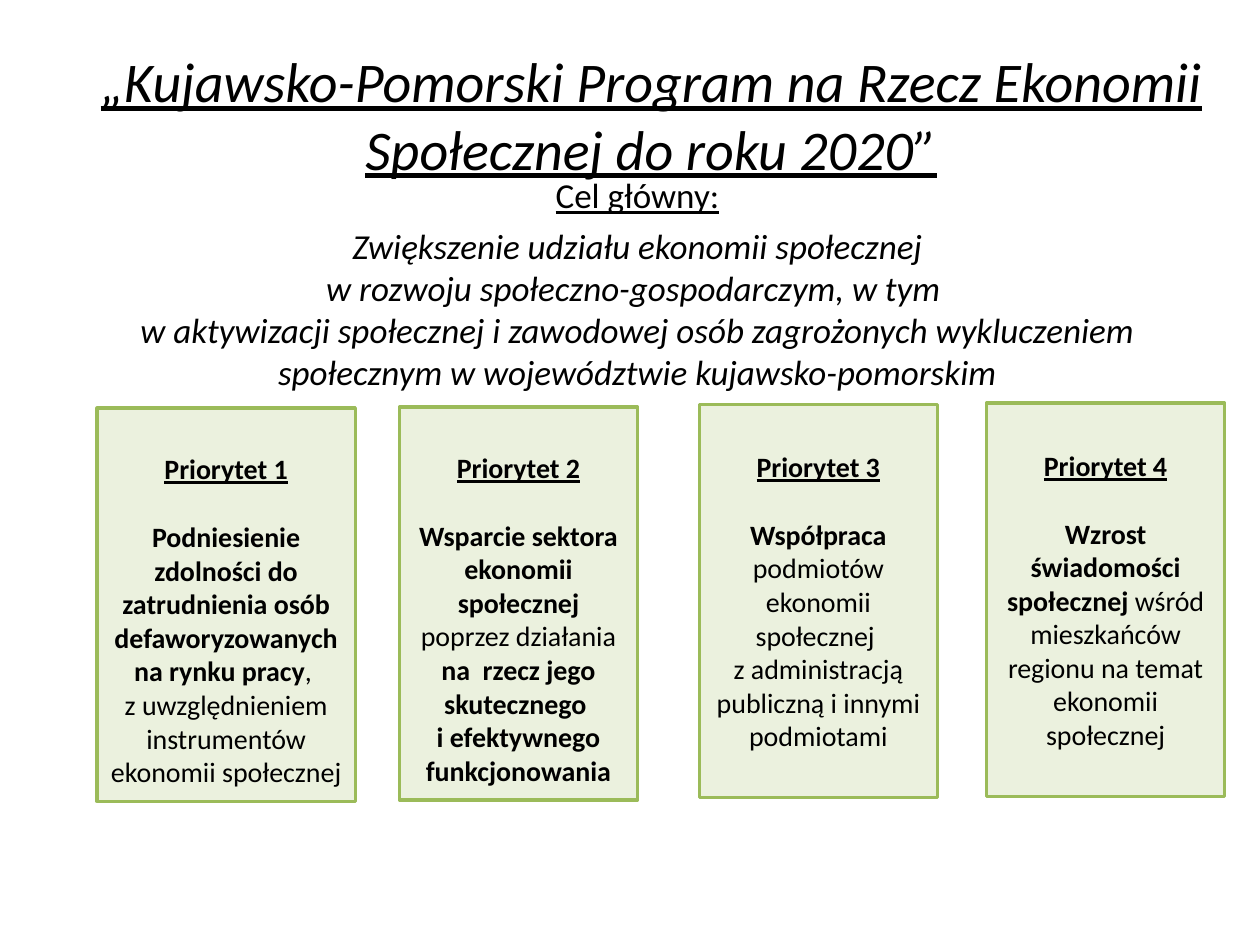
"""Build the slide on the regional social economy programme and its four priorities."""
from pptx import Presentation
from pptx import util as u
from pptx.dml.color import RGBColor
from pptx.enum import shapes, text

BLACK = RGBColor(0x00, 0x00, 0x00)
PALE_GREEN = RGBColor(0xEB, 0xF1, 0xDE)
GREEN = RGBColor(0x9B, 0xBB, 0x59)

presentation = Presentation()
presentation.slide_width = u.Inches(10)
presentation.slide_height = u.Inches(7.5)
COLUMN = presentation.slide_width / 100
ROW = presentation.slide_height / 75
slide = presentation.slides.add_slide(presentation.slide_layouts[6])


def place(left, top, width, height):
    return int(left * COLUMN), int(top * ROW), int(width * COLUMN), int(height * ROW)


def write(paragraph, runs, size, space_before=0, italic=False, underline=False):
    paragraph.alignment = text.PP_ALIGN.CENTER
    if space_before:
        paragraph.space_before = u.Pt(space_before)
    font = paragraph.font
    font.name, font.size, font.color.rgb = "Calibri", u.Pt(size), BLACK
    font.italic, font.underline = italic, underline
    for words, bold in runs:
        for index, line in enumerate(words.split("\n")):
            if index:
                paragraph.add_line_break()
            run = paragraph.add_run()
            run.text = line
            run.font.bold = bold


goal = slide.shapes.add_textbox(*place(5.6, 13.3, 90, 18.5)).text_frame
goal.word_wrap = True
write(goal.paragraphs[0], [("Cel główny:", False)], 20, underline=True)
write(goal.add_paragraph(), [(
    "Zwiększenie udziału ekonomii społecznej\n"
    "w rozwoju społeczno-gospodarczym, w tym \n"
    "w aktywizacji społecznej i zawodowej osób zagrożonych wykluczeniem "
    "społecznym w województwie kujawsko-pomorskim", False)], 20, 5, italic=True)

title = slide.shapes.add_textbox(*place(6.7, 2.8, 90, 12.5)).text_frame
title.word_wrap = True
title.vertical_anchor = text.MSO_ANCHOR.MIDDLE
write(title.paragraphs[0],
      [("„Kujawsko-Pomorski Program na Rzecz Ekonomii Społecznej do roku 2020”", False)],
      32, italic=True, underline=True)

priorities = [
    (7.7, 32.4, 20.5, 2.9, [
        ("Podniesienie zdolności do zatrudnienia osób defaworyzowanych na rynku pracy", True),
        (", \nz uwzględnieniem instrumentów ekonomii społecznej", False)]),
    (31.7, 32.3, 18.9, 2.9, [
        ("Wsparcie sektora ekonomii społecznej ", True),
        ("poprzez działania ", False),
        ("na  rzecz jego skutecznego \ni efektywnego funkcjonowania", True)]),
    (55.5, 32.1, 18.9, 0.5, [
        ("Współpraca", True),
        (" podmiotów ekonomii społecznej \nz administracją publiczną i innymi podmiotami", False)]),
    (78.3, 32, 18.9, 0.5, [
        ("Wzrost świadomości społecznej ", True),
        ("wśród mieszkańców regionu na temat ekonomii społecznej", False)]),
]
for number, (left, top, width, top_margin, runs) in enumerate(priorities, 1):
    card = slide.shapes.add_shape(shapes.MSO_SHAPE.RECTANGLE, *place(left, top, width, 31.2))
    card.shadow.inherit = False
    card.fill.solid()
    card.fill.fore_color.rgb = PALE_GREEN
    card.line.color.rgb = GREEN
    card.line.width = u.Pt(2)
    frame = card.text_frame
    frame.word_wrap = True
    frame.vertical_anchor = text.MSO_ANCHOR.MIDDLE
    frame.margin_top = int(top_margin * ROW)
    write(frame.paragraphs[0], [(f"Priorytet {number}", True)], 16, underline=True)
    write(frame.add_paragraph(), runs, 16, 19.5)

presentation.save("out.pptx")
